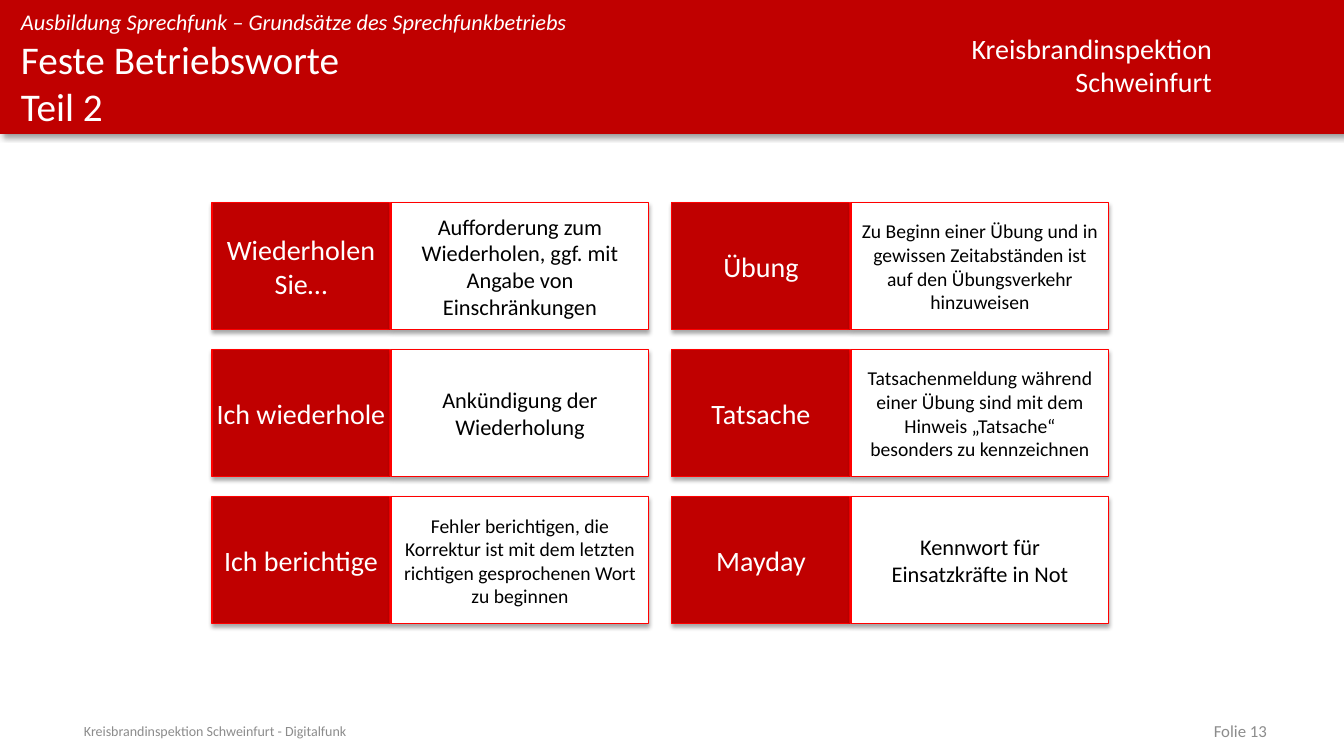
from dataclasses import dataclass

from lxml.etree import SubElement
from pptx import Presentation
from pptx.dml.color import RGBColor
from pptx.enum.shapes import MSO_SHAPE
from pptx.enum.text import MSO_ANCHOR, PP_ALIGN
from pptx.oxml.ns import qn
from pptx.util import Emu, Pt

EMU_PER_PX = 914400 / 100.8


def px(length):
    return Emu(round(length * EMU_PER_PX))


@dataclass(frozen=True)
class Theme:
    font: str = "Calibri"
    red: str = "C00000"
    outline: str = "FF0000"
    white: str = "FFFFFF"
    black: str = "000000"
    grey: str = "8C8C8C"
    title: int = 28
    term: int = 20
    body: int = 16
    dense: int = 14
    number: int = 12
    footer: int = 10


THEME = Theme()


def write(box, text, size, color, align=PP_ALIGN.LEFT, anchor=MSO_ANCHOR.TOP,
          insets=(10, 5), italic=False, wrap=True):
    frame = box.text_frame
    frame.word_wrap = wrap
    frame.vertical_anchor = anchor
    frame.margin_left = frame.margin_right = px(insets[0])
    frame.margin_top = frame.margin_bottom = px(insets[1])
    frame.text = text
    for para in frame.paragraphs:
        para.alignment = align
        for span in para.runs:
            span.font.name = THEME.font
            span.font.size = Pt(size)
            span.font.italic = italic
            span.font.color.rgb = RGBColor.from_string(color)


class Page:
    def __init__(self, slide, theme):
        self.shapes = slide.shapes
        self.theme = theme

    def label(self, area, text, size, color, **style):
        box = self.shapes.add_textbox(*map(px, area))
        write(box, text, size, color, **style)

    def panel(self, shapes, area, fill, shadow, outline=None):
        box = shapes.add_shape(MSO_SHAPE.RECTANGLE, *map(px, area))
        box.fill.solid()
        box.fill.fore_color.rgb = RGBColor.from_string(fill)
        if outline:
            box.line.color.rgb = RGBColor.from_string(outline)
            box.line.width = Pt(0.75)
        else:
            box.line.fill.background()
        self.shadow(box, *shadow)
        return box

    def shadow(self, box, opacity, blur, distance, angle):
        box.shadow.inherit = False
        effects = box.element.spPr.find(qn("a:effectLst"))
        outer = SubElement(effects, qn("a:outerShdw"), blurRad=str(Pt(blur)),
                           dist=str(Pt(distance)), dir=str(angle * 60000),
                           algn="t", rotWithShape="0")
        color = SubElement(outer, qn("a:srgbClr"), val=self.theme.black)
        SubElement(color, qn("a:alpha"), val=str(opacity * 1000))

    def card(self, left, top, term, meaning, size):
        theme = self.theme
        shapes = self.shapes.add_group_shape().shapes
        shadow = (35, 3.1, 1.8, 90)
        centred = dict(align=PP_ALIGN.CENTER, anchor=MSO_ANCHOR.MIDDLE)
        term_box = self.panel(shapes, (left, top, 178, 127), theme.red, shadow, theme.outline)
        write(term_box, term, theme.term, theme.white, insets=(4, 4), **centred)
        meaning_box = self.panel(shapes, (left + 179, top, 258, 127), theme.white, shadow,
                                 theme.outline)
        write(meaning_box, meaning, size, theme.black, **centred)


CARD_COLUMNS = (
    (
        ("Wiederholen Sie…",
         "Aufforderung zum Wiederholen, ggf. mit Angabe von Einschränkungen", THEME.body),
        ("Ich wiederhole", "Ankündigung der Wiederholung", THEME.body),
        ("Ich berichtige",
         "Fehler berichtigen, die Korrektur ist mit dem letzten richtigen "
         "gesprochenen Wort zu beginnen", THEME.dense),
    ),
    (
        ("Übung",
         "Zu Beginn einer Übung und in gewissen Zeitabständen ist auf den "
         "Übungsverkehr hinzuweisen", THEME.dense),
        ("Tatsache",
         "Tatsachenmeldung während einer Übung sind mit dem Hinweis „Tatsache“ "
         "besonders zu kennzeichnen", THEME.dense),
        ("Mayday", "Kennwort für Einsatzkräfte in Not", THEME.body),
    ),
)


def main():
    deck = Presentation()
    deck.slide_width, deck.slide_height = px(1344), px(756)
    page = Page(deck.slides.add_slide(deck.slide_layouts[6]), THEME)

    page.panel(page.shapes, (0, 0, 1344, 134), THEME.red, (40, 4, 3, 45))
    page.label((959, 26, 263, 78), "Kreisbrandinspektion\nSchweinfurt", THEME.term,
               THEME.white, align=PP_ALIGN.RIGHT, wrap=False)
    page.label((21, 8, 850, 27), "Ausbildung Sprechfunk – Grundsätze des Sprechfunkbetriebs",
               THEME.body, THEME.white, insets=(0, 0), italic=True)
    page.label((21, 35, 850, 100), "Feste Betriebsworte\vTeil 2", THEME.title,
               THEME.white, insets=(0, 0))

    for column, cards in enumerate(CARD_COLUMNS):
        for row, (term, meaning, size) in enumerate(cards):
            page.card(212 + 460 * column, 203 + 147 * row, term, meaning, size)

    page.label((74, 721, 811, 20), "Kreisbrandinspektion Schweinfurt - Digitalfunk",
               THEME.footer, THEME.grey, anchor=MSO_ANCHOR.MIDDLE)
    page.label((964, 721, 313, 20), "Folie 13", THEME.number, THEME.grey,
               align=PP_ALIGN.RIGHT, anchor=MSO_ANCHOR.MIDDLE)
    deck.save("out.pptx")


if __name__ == "__main__":
    main()
